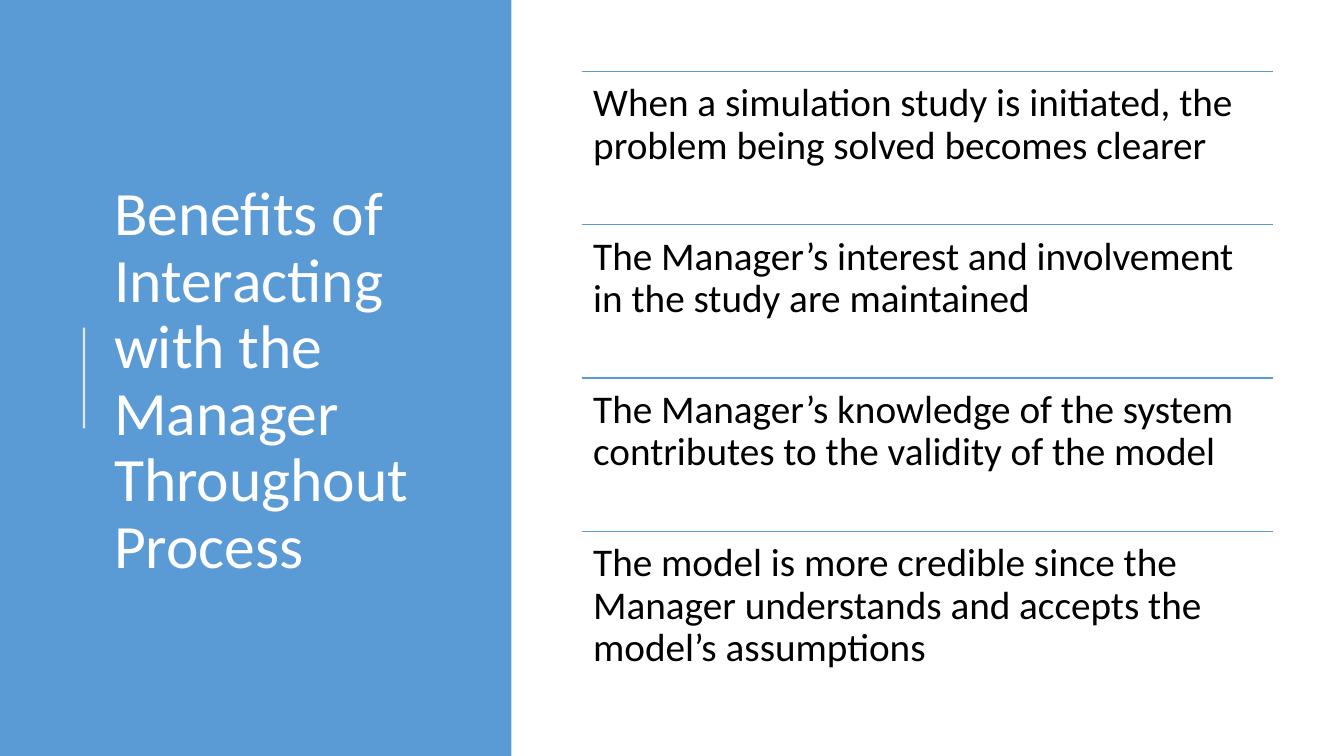
from dataclasses import dataclass

from lxml.etree import SubElement
from pptx import Presentation
from pptx.dml.color import RGBColor
from pptx.enum.shapes import MSO_CONNECTOR, MSO_SHAPE
from pptx.enum.text import MSO_ANCHOR, MSO_AUTO_SIZE, PP_ALIGN
from pptx.oxml.ns import qn
from pptx.util import Pt


@dataclass(frozen=True)
class Theme:
    font: str = "Calibri"
    blue: RGBColor = RGBColor(0x5B, 0x9B, 0xD5)
    white: RGBColor = RGBColor(0xFF, 0xFF, 0xFF)
    black: RGBColor = RGBColor(0, 0, 0)
    title_size: int = 44
    benefit_size: int = 28


THEME = Theme()
PX = 9525  # EMU per px, 96 px to the inch


def add_rule(page, x1, y1, x2, y2, color, width):
    rule = page.shapes.add_connector(
        MSO_CONNECTOR.STRAIGHT, x1 * PX, y1 * PX, x2 * PX, y2 * PX)
    rule.line.color.rgb = color
    rule.line.width = Pt(width)
    SubElement(rule._element.spPr, qn("a:effectLst"))
    return rule


def write_text(frame, text, size, color):
    frame.word_wrap = True
    frame.auto_size = MSO_AUTO_SIZE.NONE
    para = frame.paragraphs[0]
    para.text = text
    para.alignment = PP_ALIGN.LEFT
    para.line_spacing = 0.9
    para.font.name = THEME.font
    para.font.size = Pt(size)
    para.font.color.rgb = color


deck = Presentation()
deck.slide_width, deck.slide_height = 1280 * PX, 720 * PX
page = deck.slides.add_slide(deck.slide_layouts[5])

# Blue side panel, placed behind the title
panel = page.shapes.add_shape(MSO_SHAPE.RECTANGLE, 0, 0, 487 * PX, 720 * PX)
panel.shadow.inherit = False
panel.fill.solid()
panel.fill.fore_color.rgb = THEME.blue
panel.line.fill.background()
page.shapes._spTree.insert(2, panel._element)

# Translucent accent line beside the title
accent = add_rule(page, 80, 408, 80, 312, THEME.white, 1.5)
accent_color = accent.line._ln.find(".//" + qn("a:srgbClr"))
SubElement(accent_color, qn("a:alpha"), val="80000")

# Title
title = page.shapes.title
title.left, title.top, title.width, title.height = 99 * PX, 75 * PX, 354 * PX, 578 * PX
write_text(title.text_frame,
           "Benefits of Interacting with the Manager Throughout Process",
           THEME.title_size, THEME.white)
title.text_frame.vertical_anchor = MSO_ANCHOR.MIDDLE

# Benefits, each under its own rule
benefits = [
    "When a simulation study is initiated, the problem being solved becomes clearer",
    "The Manager’s interest and involvement in the study are maintained",
    "The Manager’s knowledge of the system contributes to the validity of the model",
    "The model is more credible since the Manager understands and accepts the "
    "model’s assumptions",
]
left, first_top, width, row_height, inset = 554, 68, 658, 146, 11
for row, benefit in enumerate(benefits):
    top = first_top + row * row_height
    add_rule(page, left, top, left + width, top, THEME.blue, 1)
    box = page.shapes.add_textbox(left * PX, top * PX, width * PX, row_height * PX)
    frame = box.text_frame
    frame.margin_left = frame.margin_right = inset * PX
    frame.margin_top = frame.margin_bottom = inset * PX
    frame.vertical_anchor = MSO_ANCHOR.TOP
    write_text(frame, benefit, THEME.benefit_size, THEME.black)

deck.save("out.pptx")
